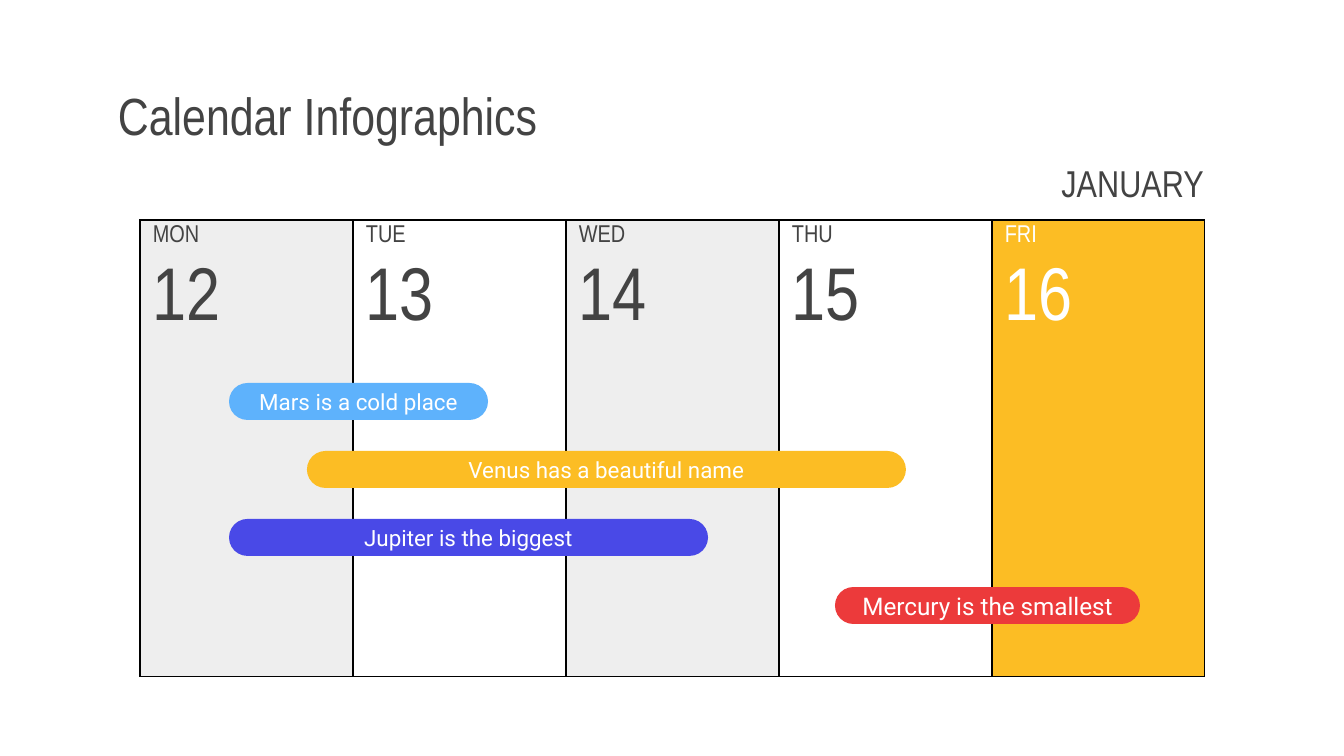
from dataclasses import dataclass

from lxml import etree
from pptx import Presentation
from pptx.dml.color import RGBColor
from pptx.enum.shapes import MSO_SHAPE
from pptx.enum.text import MSO_ANCHOR, PP_ALIGN
from pptx.oxml.ns import qn
from pptx.util import Emu, Pt

ROUNDED = MSO_SHAPE.ROUNDED_RECTANGLE
MIDDLE = MSO_ANCHOR.MIDDLE
LEFT, CENTER, RIGHT = PP_ALIGN.LEFT, PP_ALIGN.CENTER, PP_ALIGN.RIGHT

EMU_PER_PX = 914400 / 134.4
HEADING_FONT, EVENT_FONT = "Arial Narrow", "Roboto"
NO_GRID_STYLE = "{2D5ABB26-0587-4C30-8999-92F81FD0307C}"

WHITE = RGBColor(0xFF, 0xFF, 0xFF)
BLACK = RGBColor(0x00, 0x00, 0x00)
DARK = RGBColor(0x43, 0x43, 0x43)
GRAY = RGBColor(0xEE, 0xEE, 0xEE)
YELLOW = RGBColor(0xFC, 0xBD, 0x24)
SKY = RGBColor(0x5E, 0xB2, 0xFC)
INDIGO = RGBColor(0x49, 0x49, 0xE7)
RED = RGBColor(0xEC, 0x3A, 0x3B)

TABLE_LEFT, TABLE_TOP, DAY_WIDTH = 140, 220, 213
ROW_HEIGHTS = [32, 98, 109, 109, 109]
EVENT_TOP, EVENT_STEP, EVENT_HEIGHT = 383, 68, 37
INSET = 13


@dataclass
class Day:
    name: str
    number: str
    fill: RGBColor | None = None
    color: RGBColor = DARK


@dataclass
class Event:
    text: str
    left: int
    width: int
    fill: RGBColor
    size: int = 12


DAYS = [
    Day("MON", "12", GRAY),
    Day("TUE", "13"),
    Day("WED", "14", GRAY),
    Day("THU", "15"),
    Day("FRI", "16", YELLOW, WHITE),
]

EVENTS = [
    Event("Mars is a cold place", 229, 259, SKY),
    Event("Venus has a beautiful name", 307, 599, YELLOW),
    Event("Jupiter is the biggest", 229, 479, INDIGO),
    Event("Mercury is the smallest", 835, 305, RED, 13),
]


def px(value: int) -> Emu:
    return Emu(round(value * EMU_PER_PX))


def write(frame, text: str, font: str, size: int, color: RGBColor, align=LEFT) -> None:
    frame.text = text
    para = frame.paragraphs[0]
    para.alignment = align
    para.font.name = font
    para.font.size = Pt(size)
    para.font.color.rgb = color


def set_up_frame(frame) -> None:
    frame.word_wrap = True
    frame.vertical_anchor = MIDDLE
    frame.margin_left = frame.margin_right = px(INSET)
    frame.margin_top = frame.margin_bottom = px(INSET)


def set_borders(cell, drawn: str) -> None:
    """Draw the sides named in drawn (of L, R, T, B) and clear the others."""
    properties = cell._tc.get_or_add_tcPr()
    for index, side in enumerate("LRTB"):
        line = etree.Element(qn(f"a:ln{side}"), w=str(Pt(0.75)))
        if side in drawn:
            fill = etree.SubElement(line, qn("a:solidFill"))
            etree.SubElement(fill, qn("a:srgbClr"), val=str(BLACK))
        else:
            etree.SubElement(line, qn("a:noFill"))
        properties.insert(index, line)


def add_calendar(page, days: list[Day]) -> None:
    table_frame = page.shapes.add_table(
        len(ROW_HEIGHTS), len(days), px(TABLE_LEFT), px(TABLE_TOP),
        px(DAY_WIDTH * len(days)), px(sum(ROW_HEIGHTS)))
    table = table_frame.table
    table.first_row = table.horz_banding = False
    table._tbl.tblPr.find(qn("a:tableStyleId")).text = NO_GRID_STYLE
    for row, height in zip(table.rows, ROW_HEIGHTS):
        row.height = px(height)

    last_row = len(ROW_HEIGHTS) - 1
    for column, day in enumerate(days):
        table.columns[column].width = px(DAY_WIDTH)
        for row in range(len(ROW_HEIGHTS)):
            cell = table.cell(row, column)
            cell.margin_left = cell.margin_right = px(INSET)
            cell.margin_top = cell.margin_bottom = 0
            cell.vertical_anchor = MIDDLE
            if day.fill is None:
                cell.fill.background()
            else:
                cell.fill.solid()
                cell.fill.fore_color.rgb = day.fill
            set_borders(cell, "LR" + {0: "T", last_row: "B"}.get(row, ""))
        for row, (text, size) in enumerate([(day.name, 13), (day.number, 40)]):
            write(table.cell(row, column).text_frame, text, HEADING_FONT, size, day.color)


def add_event(page, event: Event, top: int) -> None:
    bar = page.shapes.add_shape(
        ROUNDED, px(event.left), px(top), px(event.width), px(EVENT_HEIGHT))
    bar.adjustments[0] = 0.5
    bar.shadow.inherit = False
    bar.fill.solid()
    bar.fill.fore_color.rgb = event.fill
    bar.line.fill.background()
    set_up_frame(bar.text_frame)
    write(bar.text_frame, event.text, EVENT_FONT, event.size, WHITE, CENTER)


def main() -> None:
    deck = Presentation()
    deck.slide_width, deck.slide_height = px(1344), px(756)
    page = deck.slides.add_slide(deck.slide_layouts[5])

    title = page.shapes.title
    title.left, title.top, title.width, title.height = px(105), px(79), px(1136), px(71)
    set_up_frame(title.text_frame)
    write(title.text_frame, "Calendar Infographics", HEADING_FONT, 28, DARK)

    add_calendar(page, DAYS)
    for index, event in enumerate(EVENTS):
        add_event(page, event, EVENT_TOP + index * EVENT_STEP)

    month = page.shapes.add_textbox(px(899), px(156), px(318), px(53))
    set_up_frame(month.text_frame)
    write(month.text_frame, "JANUARY", HEADING_FONT, 20, DARK, RIGHT)

    deck.save("out.pptx")


if __name__ == "__main__":
    main()
